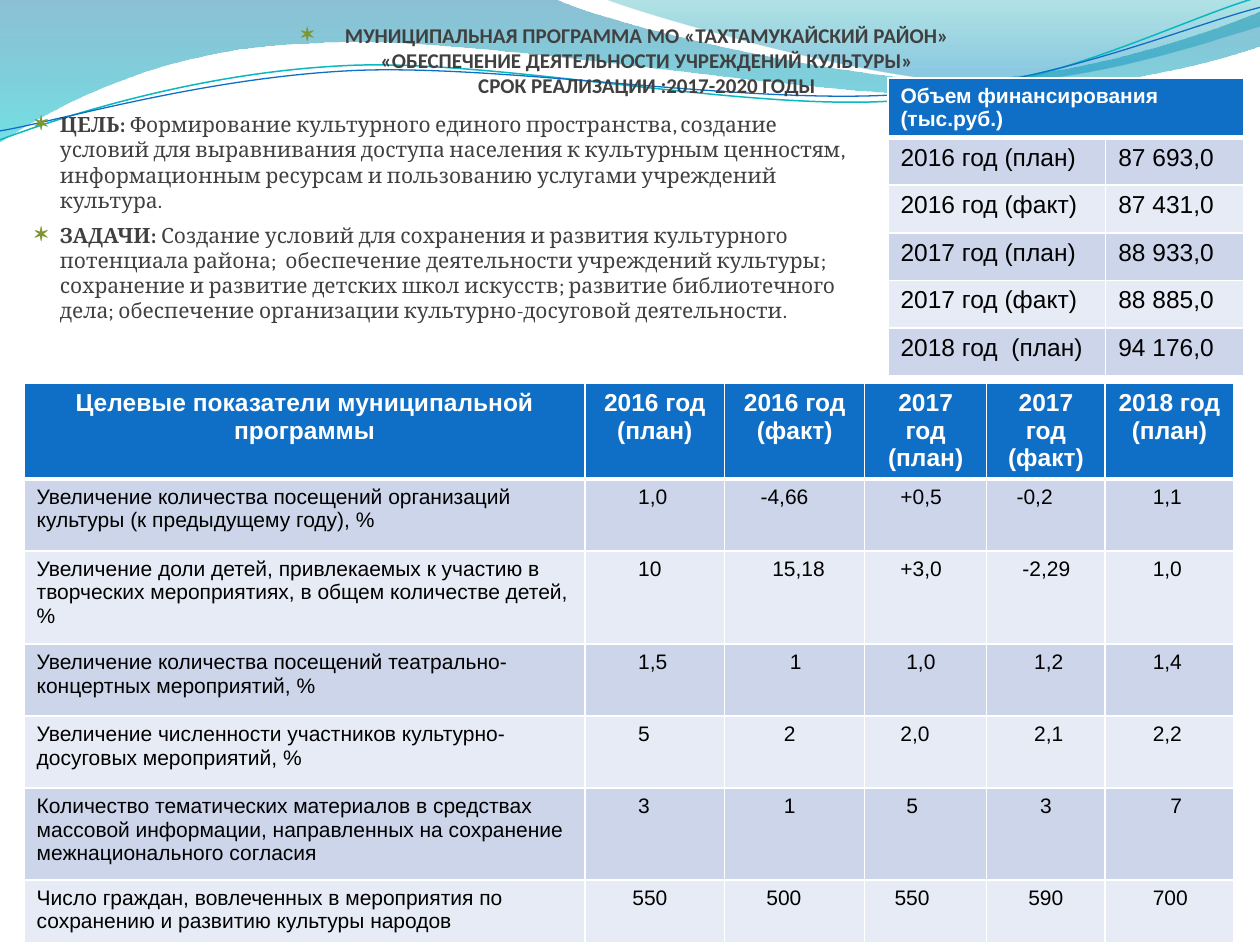
from dataclasses import dataclass

from lxml import etree
from pptx import Presentation
from pptx import util as u
from pptx.dml.color import RGBColor
from pptx.enum import text
from pptx.oxml import ns


@dataclass(frozen=True)
class Theme:
    ink: str = "404040"
    black: str = "000000"
    white: str = "FFFFFF"
    header: str = "0F6FC6"
    bands: tuple = ("CCD5EA", "E7EBF5")
    bullet: str = "7E9632"
    teal: str = "0AB8BF"
    small: int = 12
    large: int = 14
    title_font: str = "Calibri"
    body_font: str = "Cambria"
    table_font: str = "Arial"
    bullet_font: str = "Symbol"


THEME = Theme()
SPACE = 0.118  # width in cm of one blank at the small size

# Outlines in cm: two numbers are a line, six are a Bézier curve.
MAIN_WAVE = [
    (0, 0), (11.18, -0.03),
    (12.09, 0.43, 16.87, 1.6, 19.25, 1.6),
    (21.67, 1.6, 24.33, 0.66, 25.4, 0.23),
    (25.43, 0.91),
    (24.97, 1.12, 22.1, 1.93, 18.95, 1.9),
    (15.8, 1.9, 9.7, 0.71, 6.53, 0.86),
    (3.28, 0.91, 1.17, 2.11, -0.03, 2.87),
    (0, 0),
]
RIGHT_WAVE = [
    (12.17, -0.03),
    (12.93, 0.28, 17.32, 1.57, 19.53, 1.65),
    (21.74, 1.75, 24.41, 0.81, 25.4, 0.53),
    (25.4, 0), (12.17, -0.03),
]
TEAL_LINE = [
    (0, 2.82),
    (1.22, 2.36, 4.01, 1.45, 7.04, 1.32),
    (10.03, 1.19, 15.06, 2.26, 18.11, 2.03),
    (21.16, 1.8, 23.83, 0.38, 25.35, -0.05),
]
BLUE_LINE = [
    (0, 2.64),
    (1.19, 2.44, 4.17, 1.55, 7.19, 1.42),
    (10.24, 1.3, 15.16, 2.13, 18.21, 1.9),
    (21.23, 1.7, 23.9, 0.53, 25.4, 0.15),
]

TITLE = ("МУНИЦИПАЛЬНАЯ ПРОГРАММА МО «ТАХТАМУКАЙСКИЙ РАЙОН»\v"
         "«ОБЕСПЕЧЕНИЕ ДЕЯТЕЛЬНОСТИ УЧРЕЖДЕНИЙ КУЛЬТУРЫ»\v"
         "СРОК РЕАЛИЗАЦИИ :2017-2020 ГОДЫ")
AIMS = [
    ("ЦЕЛЬ: ", "Формирование культурного единого пространства, создание условий "
     "для выравнивания доступа населения к культурным ценностям, информационным "
     "ресурсам и пользованию услугами учреждений культура."),
    ("ЗАДАЧИ: ", "Создание условий для сохранения и развития культурного потенциала "
     "района;  обеспечение деятельности учреждений культуры;  сохранение и развитие "
     "детских школ искусств; развитие библиотечного дела; обеспечение организации "
     "культурно-досуговой деятельности."),
]
FUNDING = [
    ("Объем финансирования (тыс.руб.)", ""),
    ("2016 год (план)", "87 693,0"),
    ("2016 год (факт)", "87 431,0"),
    ("2017 год (план)", "88 933,0"),
    ("2017 год (факт)", "88 885,0"),
    ("2018 год  (план)", "94 176,0"),
]
TARGETS = [
    ("Целевые показатели муниципальной программы", "2016 год (план)", "2016 год (факт)",
     "2017 год\n(план)", "2017 год\n(факт)", "2018 год\n(план)"),
    ("Увеличение количества посещений организаций культуры (к предыдущему году), %",
     "1,0", "-4,66", "+0,5", "-0,2", "1,1"),
    ("Увеличение доли детей, привлекаемых к участию в творческих мероприятиях, "
     "в общем количестве детей, %", "10", "15,18", "+3,0", "-2,29", "1,0"),
    ("Увеличение количества посещений театрально-концертных мероприятий, %",
     "1,5", "1", "1,0", "1,2", "1,4"),
    ("Увеличение численности участников культурно-досуговых мероприятий, %",
     "5", "2", "2,0", "2,1", "2,2"),
    ("Количество тематических материалов в средствах массовой информации, "
     "направленных на сохранение межнационального согласия", "3", "1", "5", "3", "7"),
    ("Число граждан, вовлеченных в мероприятия по сохранению и развитию культуры народов",
     "550", "500", "550", "590", "700"),
]
# Indent of each value, in blanks, for the rows below the header.
TARGET_INDENTS = [
    (0, 7, 4, 4, 3, 6), (0, 7, 6, 4, 4, 6), (0, 7, 9, 5, 6, 6),
    (0, 7, 8, 4, 6, 6), (0, 7, 8, 5, 7, 9), (0, 6, 5, 3, 5, 6),
]


def rgb(value):
    return RGBColor.from_string(value)


def set_font(font, name, size, color, bold=None):
    font.name, font.size, font.bold = name, u.Pt(size), bold
    font.color.rgb = rgb(color)


def add_outline(page, outline, close):
    """Build a freeform through all points, then join each curve's three points."""
    points = [(u.Cm(part[i]), u.Cm(part[i + 1]))
              for part in outline for i in range(0, len(part), 2)]
    builder = page.shapes.build_freeform(*points[0])
    builder.add_line_segments(points[1:], close=close)
    shape = builder.convert_to_shape()
    shape.shadow.inherit = False
    lines = iter(shape.element.xpath(".//a:lnTo"))
    for part in outline[1:]:
        node = next(lines)
        if len(part) == 6:
            node.addprevious(curve := etree.Element(ns.qn("a:cubicBezTo")))
            for corner in (node, next(lines), next(lines)):
                curve.append(corner[0])
                corner.getparent().remove(corner)
    return shape


def add_wave(page, outline, stops):
    """Add a filled wave; stops hold position, colour and opacity in percent."""
    wave = add_outline(page, outline, True)
    wave.line.fill.background()
    wave.fill.gradient()
    wave.fill.gradient_angle = 270
    for stop, (position, color, _) in zip(wave.fill.gradient_stops, stops):
        stop.position, stop.color.rgb = position, rgb(color)
    for node, (_, _, opacity) in zip(wave.element.xpath(".//a:gs/a:srgbClr"), stops):
        etree.SubElement(node, ns.qn("a:alpha"), val=str(opacity * 1000))


def add_curve(page, outline, color, width):
    curve = add_outline(page, outline, False)
    curve.fill.background()
    curve.line.color.rgb, curve.line.width = rgb(color), u.Pt(width)


def add_bullet(para, left, hanging, percent):
    props = para._p.get_or_add_pPr()
    props.set("marL", str(u.Cm(left)))
    props.set("indent", str(-u.Cm(hanging)))
    color = etree.SubElement(props, ns.qn("a:buClr"))
    etree.SubElement(color, ns.qn("a:srgbClr"), val=THEME.bullet)
    etree.SubElement(props, ns.qn("a:buSzPct"), val=str(percent * 1000))
    etree.SubElement(props, ns.qn("a:buFont"), typeface=THEME.bullet_font, charset="2")
    etree.SubElement(props, ns.qn("a:buChar"), char="*")


def place_title(page):
    title = page.shapes.title
    page.shapes.element.append(title.element)  # bring in front of the waves
    title.left, title.top, title.width, title.height = map(u.Cm, (0.7, 0.32, 23.8, 2.39))
    frame = title.text_frame
    frame.text = TITLE
    frame.auto_size, frame.vertical_anchor = text.MSO_AUTO_SIZE.NONE, text.MSO_ANCHOR.TOP
    para = frame.paragraphs[0]
    para.alignment = text.PP_ALIGN.CENTER
    add_bullet(para, 0.89, 0.89, 128)
    set_font(para.font, THEME.title_font, THEME.small, THEME.ink, True)


def add_aims(page):
    box = page.shapes.add_textbox(*map(u.Cm, (0.32, 2.13, 17.2, 4.85)))
    frame = box.text_frame
    frame.word_wrap = True
    for index, (label, wording) in enumerate(AIMS):
        para = frame.add_paragraph() if index else frame.paragraphs[0]
        para.space_before, para.space_after = u.Pt(2.4), u.Pt(3)
        add_bullet(para, 0.64, 0.51, 130)
        set_font(para.font, THEME.body_font, THEME.small, THEME.ink)
        for part, bold in ((label, True), (wording, False)):
            span = para.add_run()
            span.text, span.font.bold = part, bold


def underline_header(cell):
    border = etree.Element(ns.qn("a:lnB"), w=str(u.Pt(3)))
    fill = etree.SubElement(border, ns.qn("a:solidFill"))
    etree.SubElement(fill, ns.qn("a:srgbClr"), val=THEME.white)
    cell._tc.get_or_add_tcPr().insert(0, border)


def add_grid(page, corner, widths, heights, rows, sizes, header_align, indents=None):
    """Add a banded table; sizes are those of header and body text."""
    frame = page.shapes.add_table(len(rows), len(widths), *map(u.Cm, corner),
                                  u.Cm(sum(widths)), u.Cm(sum(heights)))
    grid = frame.table
    for column, width in zip(grid.columns, widths):
        column.width = u.Cm(width)
    for r, (row, height) in enumerate(zip(rows, heights)):
        grid.rows[r].height = u.Cm(height)
        head = r == 0
        for c, wording in enumerate(row):
            cell = grid.cell(r, c)
            cell.text = wording
            cell.fill.solid()
            cell.fill.fore_color.rgb = rgb(THEME.header if head else THEME.bands[(r - 1) % 2])
            if head:
                underline_header(cell)
            elif indents:
                cell.margin_left = u.Cm(0.25 + SPACE * indents[r - 1][c])
            for para in cell.text_frame.paragraphs:
                para.alignment = header_align if head else text.PP_ALIGN.LEFT
                set_font(para.font, THEME.table_font, sizes[0 if head else 1],
                         THEME.white if head else THEME.black, head)
    return grid


def main():
    deck = Presentation()
    deck.slide_width, deck.slide_height = u.Cm(25.4), u.Cm(19.05)
    page = deck.slides.add_slide(deck.slide_layouts[5])
    add_wave(page, MAIN_WAVE, [(0, "0074A1", 45), (1, "00C6CF", 55)])
    add_wave(page, RIGHT_WAVE, [(0, "00A1A9", 30), (0.8, "008BBF", 45)])
    add_curve(page, TEAL_LINE, THEME.teal, 0.85)
    add_curve(page, BLUE_LINE, THEME.header, 0.75)
    place_title(page)
    funding = add_grid(page, (17.9, 1.57), (4.39, 2.79), [0.96] * 6, FUNDING,
                       (THEME.small, THEME.large), text.PP_ALIGN.LEFT)
    funding.cell(0, 0).merge(funding.cell(0, 1))
    add_aims(page)
    targets = add_grid(page, (0.49, 7.72), (11.3, 2.82, 2.82, 2.46, 2.39, 2.59),
                       (1.65, 1.45, 1.88, 1.45, 1.45, 1.85, 1.07), TARGETS,
                       (THEME.large, THEME.small), text.PP_ALIGN.CENTER, TARGET_INDENTS)
    for cell in targets.rows[0].cells:
        cell.margin_bottom = u.Cm(0.03)
    deck.save("out.pptx")


if __name__ == "__main__":
    main()
